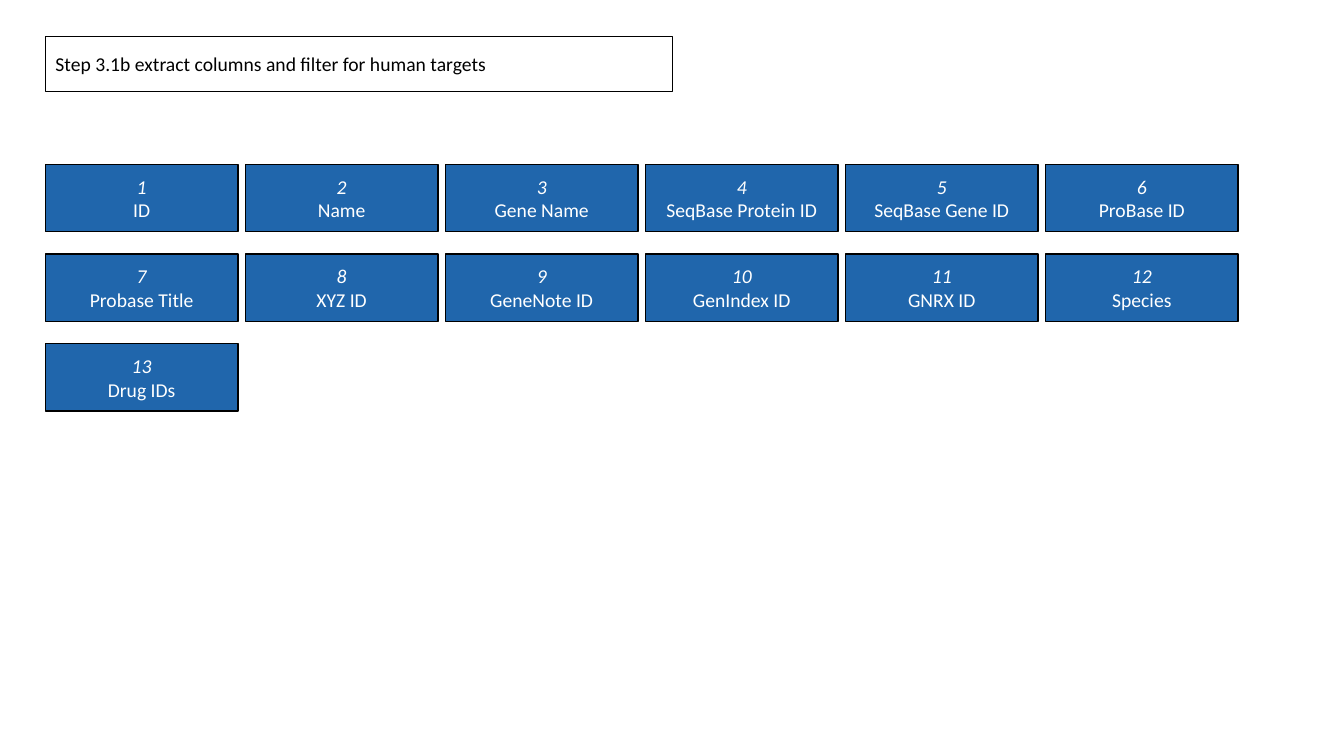
"""Build a slide listing the columns extracted when filtering for human targets."""
from pptx import Presentation
from pptx.dml.color import RGBColor
from pptx.enum import shapes, text
from pptx.util import Inches, Pt

COLUMNS = ["ID", "Name", "Gene Name", "SeqBase Protein ID", "SeqBase Gene ID",
           "ProBase ID", "Probase Title", "XYZ ID", "GeneNote ID",
           "GenIndex ID", "GNRX ID", "Species", "Drug IDs"]
PER_ROW = 6
LEFT, LAST_LEFT, TOP = 0.45, 10.37, 1.63
BOX_W, BOX_H = 1.91, 0.67
STEP_X, STEP_Y = (LAST_LEFT - LEFT) / (PER_ROW - 1), 0.89


def rgb(color):
    return RGBColor.from_string(color)


def style(sp, color, align):
    sp.line.color.rgb = rgb("000000")
    sp.line.width = Pt(1)
    tf = sp.text_frame
    tf.word_wrap = True
    tf.vertical_anchor = text.MSO_ANCHOR.MIDDLE
    for p in tf.paragraphs:
        p.alignment = align
        p.font.name = "Calibri"
        p.font.size = Pt(14)
        p.font.color.rgb = rgb(color)


prs = Presentation()
prs.slide_width, prs.slide_height = Inches(13.33), Inches(7.5)
s = prs.slides.add_slide(prs.slide_layouts[5])

title = s.shapes.title
title.left, title.top = Inches(LEFT), Inches(0.36)
title.width, title.height = Inches(6.22), Inches(0.55)
title.text_frame.text = "Step 3.1b extract columns and filter for human targets"
title.text_frame.auto_size = text.MSO_AUTO_SIZE.NONE
style(title, "000000", text.PP_ALIGN.LEFT)

for i, name in enumerate(COLUMNS):
    row, col = divmod(i, PER_ROW)
    sp = s.shapes.add_shape(
        shapes.MSO_SHAPE.RECTANGLE,
        Inches(LEFT + col * STEP_X), Inches(TOP + row * STEP_Y),
        Inches(BOX_W), Inches(BOX_H))
    sp.shadow.inherit = False
    sp.fill.solid()
    sp.fill.fore_color.rgb = rgb("2066AC")
    sp.text_frame.text = f"{i + 1}\n{name}"
    style(sp, "FFFFFF", text.PP_ALIGN.CENTER)
    sp.text_frame.paragraphs[0].font.italic = True

prs.save("out.pptx")
